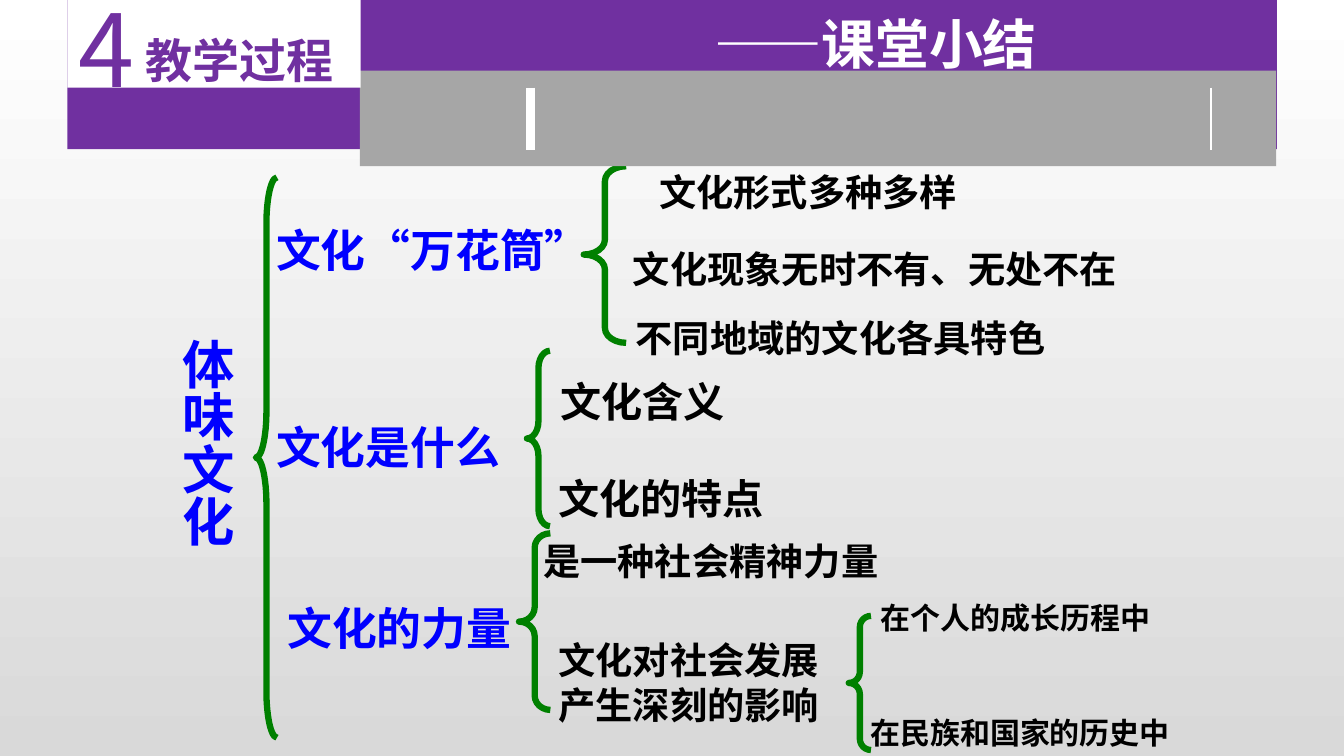
from lxml import etree
from pptx import Presentation
from pptx.dml.color import RGBColor
from pptx.enum.shapes import MSO_CONNECTOR, MSO_SHAPE
from pptx.enum.text import MSO_ANCHOR, MSO_AUTO_SIZE, PP_ALIGN
from pptx.oxml.ns import qn
from pptx.util import Cm, Pt

BLUE = RGBColor(0x00, 0x00, 0xFF)
GREEN = RGBColor(0x00, 0x80, 0x00)
PURPLE = RGBColor(0x70, 0x30, 0xA0)
GRAY = RGBColor(0xA6, 0xA6, 0xA6)
SILVER = RGBColor(0xD9, 0xD9, 0xD9)
WHITE = RGBColor(0xFF, 0xFF, 0xFF)
BLACK = RGBColor(0x00, 0x00, 0x00)
FONT = "Noto Sans CJK SC"

RECT = MSO_SHAPE.RECTANGLE
BRACE = MSO_SHAPE.LEFT_BRACE
LINE = MSO_CONNECTOR.STRAIGHT
GROW = MSO_AUTO_SIZE.SHAPE_TO_FIT_TEXT
BOTTOM = MSO_ANCHOR.BOTTOM
CENTER = PP_ALIGN.CENTER

BRACES = [
    (6.45, 4.47, 0.53, 14.12, 2.2),
    (14.71, 4.19, 1.07, 4.45, 0.35),
    (13.28, 8.84, 0.58, 4.42, 0.75),
    (13.08, 13.44, 0.79, 4.45, 0.46),
    (21.39, 15.52, 0.56, 3.38, 0.5),
]
TOPICS = [
    ("文化“万花筒”", 6.71, 5.49, 9.4),
    ("文化是什么", 6.71, 10.46, 8.26),
    ("文化的力量", 6.99, 15.01, 7.72),
]
POINTS = [
    ("文化形式多种多样", 16.36, 4.14, 14.12, 26.6),
    ("文化现象无时不有、无处不在", 15.7, 6.07, 15.47, 26.6),
    ("不同地域的文化各具特色", 15.77, 7.82, 17.6, 26.6),
    ("文化含义", 13.87, 9.35, 12.27, 29.4),
    ("文化的特点", 13.82, 11.81, 11.2, 29.4),
    ("是一种社会精神力量", 13.44, 13.44, 12.45, 26.6),
    ("文化对社会发展产生深刻的影响", 13.82, 15.93, 7.57, 26.6),
    ("在个人的成长历程中", 21.95, 14.99, 9.73, 21.4),
    ("在民族和国家的历史中", 21.69, 17.88, 10.95, 21.4),
]


def write(frame, words, size, color, bold=True):
    para = frame.paragraphs[0]
    run = para.add_run()
    run.text = words
    font = run.font
    font.size = Pt(size)
    font.bold = bold
    font.name = FONT
    font.color.rgb = color
    props = run._r.get_or_add_rPr()
    props.set("lang", "zh-CN")
    etree.SubElement(props, qn("a:ea")).set("typeface", FONT)
    return para


def label(slide, words, left, top, width, height, size, color, bold=True):
    box = slide.shapes.add_textbox(Cm(left), Cm(top), Cm(width), Cm(height))
    frame = box.text_frame
    frame.word_wrap = True
    frame.auto_size = GROW
    para = write(frame, words, size, color, bold)
    return frame, para


def block(slide, left, top, width, height, color):
    rect = slide.shapes.add_shape(RECT, Cm(left), Cm(top), Cm(width), Cm(height))
    rect.shadow.inherit = False
    rect.fill.solid()
    rect.fill.fore_color.rgb = color
    rect.line.fill.background()
    return rect


def brace(slide, left, top, width, height, bend):
    curve = slide.shapes.add_shape(BRACE, Cm(left), Cm(top), Cm(width), Cm(height))
    curve.shadow.inherit = False
    curve.adjustments[0] = bend
    curve.adjustments[1] = 0.5
    curve.fill.background()
    curve.line.color.rgb = GREEN
    curve.line.width = Pt(4.5)


def bar(slide, left, top, end, weight):
    line = slide.shapes.add_connector(LINE, Cm(left), Cm(top), Cm(left), Cm(end))
    line.line.color.rgb = WHITE
    line.line.width = Pt(weight)
    etree.SubElement(line._element.spPr, qn("a:effectLst"))


def shade(slide):
    fill = slide.background.fill
    fill.gradient()
    fill.gradient_angle = 270
    for stop, color in zip(fill.gradient_stops, (WHITE, SILVER)):
        stop.color.rgb = color


def header(slide):
    block(slide, 1.7, 0, 30.48, 3.76, PURPLE)
    block(slide, 9.07, 1.78, 23.09, 2.41, GRAY)
    bar(slide, 13.36, 2.21, 3.78, 6.5)
    bar(slide, 30.51, 2.21, 3.78, 1.5)

    frame = block(slide, 1.7, 0, 7.39, 2.21, WHITE).text_frame
    frame.word_wrap = True
    frame.vertical_anchor = BOTTOM
    frame.margin_left = Cm(1.55)
    frame.margin_bottom = 0
    write(frame, "教学过程", 33.6, PURPLE).alignment = CENTER

    frame, para = label(slide, "4", 1.73, -0.46, 1.78, 3.33, 72, PURPLE, False)
    frame.word_wrap = False
    frame, para = label(slide, "——课堂小结", 15.9, 0.15, 12.32, 1.9, 38.4, WHITE)
    para.alignment = CENTER


def outline(slide):
    for place in BRACES:
        brace(slide, *place)
    frame, para = label(slide, "体味文化", 4.01, 8.28, 2.11, 7.24, 37.4, BLUE)
    frame._txBody.bodyPr.set("vert", "eaVert")
    for words, left, top, width in TOPICS:
        label(slide, words, left, top, width, 1.63, 32, BLUE)
    for words, left, top, width, size in POINTS:
        label(slide, words, left, top, width, 1.4, size, BLACK)


def main():
    deck = Presentation()
    deck.slide_width = Cm(33.87)
    deck.slide_height = Cm(19.05)
    slide = deck.slides.add_slide(deck.slide_layouts[6])
    shade(slide)
    outline(slide)
    header(slide)
    deck.save("out.pptx")


if __name__ == "__main__":
    main()
